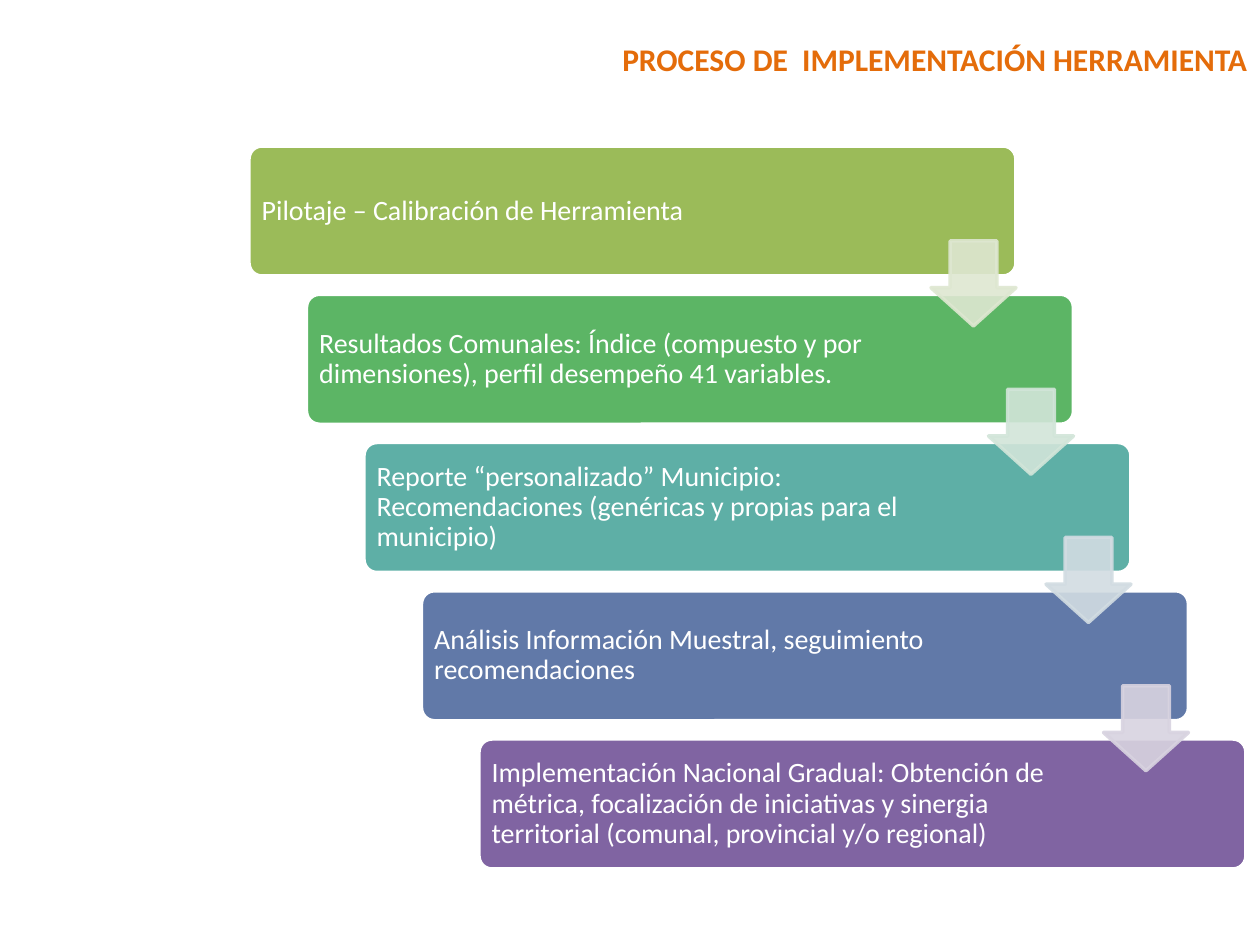
from lxml.etree import SubElement
from pptx import Presentation
from pptx.dml.color import RGBColor
from pptx.enum.shapes import MSO_SHAPE
from pptx.enum.text import MSO_ANCHOR, MSO_AUTO_SIZE, PP_ALIGN
from pptx.oxml.ns import qn
from pptx.util import Pt

PX = 914400 / 126
FONT = "Calibri"
WHITE = RGBColor(0xFF, 0xFF, 0xFF)
ORANGE = RGBColor(0xE4, 0x6C, 0x0A)

STEPS = [
    ("Pilotaje – Calibración de Herramienta", RGBColor(0x9B, 0xBB, 0x59)),
    ("Resultados Comunales: Índice (compuesto y por dimensiones), "
     "perfil desempeño 41 variables.", RGBColor(0x5C, 0xB5, 0x65)),
    ("Reporte “personalizado” Municipio:  Recomendaciones "
     "(genéricas y propias para el municipio)", RGBColor(0x5E, 0xAF, 0xA6)),
    ("Análisis Información Muestral, seguimiento recomendaciones",
     RGBColor(0x61, 0x79, 0xA8)),
    ("Implementación Nacional Gradual: Obtención de métrica, focalización de "
     "iniciativas y sinergia territorial (comunal, provincial y/o regional)",
     RGBColor(0x80, 0x64, 0xA2)),
]
ARROW_COLORS = [
    RGBColor(0xDE, 0xE7, 0xD1),
    RGBColor(0xD2, 0xE5, 0xD9),
    RGBColor(0xD2, 0xDC, 0xE2),
    RGBColor(0xD8, 0xD3, 0xE0),
]

STEP_WIDTH, STEP_HEIGHT = 767, 130
ARROW_SIZE, ARROW_DX, ARROW_DY = 85, 682, 95
PADDING, RIGHT_PADDING = 9, 151


def emu(px):
    return round(px * PX)


def format_text(paragraph, size, color, bold=False):
    for run in paragraph.runs:
        run.font.name = FONT
        run.font.size = Pt(size)
        run.font.bold = bold
        run.font.color.rgb = color


def add_block(slide, preset, left, top, width, height, fill, line, adjustments):
    block = slide.shapes.add_shape(preset, *map(emu, (left, top, width, height)))
    block.shadow.inherit = False
    block.fill.solid()
    block.fill.fore_color.rgb = fill
    block.line.color.rgb = line
    block.line.width = Pt(2)
    for index, value in enumerate(adjustments):
        block.adjustments[index] = value
    return block


def add_title(slide, left, top, width, height):
    title = slide.shapes.title
    title.left, title.top, title.width, title.height = map(
        emu, (left, top, width, height))
    frame = title.text_frame
    frame.text = "PROCESO DE  IMPLEMENTACIÓN HERRAMIENTA"
    frame.word_wrap = True
    frame.auto_size = MSO_AUTO_SIZE.NONE
    frame.vertical_anchor = MSO_ANCHOR.TOP
    heading = frame.paragraphs[0]
    heading.alignment = PP_ALIGN.RIGHT
    format_text(heading, 18, ORANGE, bold=True)


def add_step(slide, left, top, wording, color):
    step = add_block(slide, MSO_SHAPE.ROUNDED_RECTANGLE, left, top,
                     STEP_WIDTH, STEP_HEIGHT, color, WHITE, [0.1])
    frame = step.text_frame
    frame.text = wording
    frame.word_wrap = True
    frame.vertical_anchor = MSO_ANCHOR.MIDDLE
    frame.margin_left = frame.margin_top = frame.margin_bottom = emu(PADDING)
    frame.margin_right = emu(RIGHT_PADDING)
    paragraph = frame.paragraphs[0]
    paragraph.alignment = PP_ALIGN.LEFT
    paragraph.line_spacing = 0.9
    format_text(paragraph, 16, WHITE)


def add_arrow(slide, left, top, color):
    arrow = add_block(slide, MSO_SHAPE.DOWN_ARROW, left, top,
                      ARROW_SIZE, ARROW_SIZE, color, color, [0.55, 0.45])
    for shade in arrow._element.spPr.iter(qn("a:srgbClr")):
        SubElement(shade, qn("a:alpha"), val="90000")


def add_staircase(slide, left, top, width, height):
    gaps = len(STEPS) - 1
    dx = (width - STEP_WIDTH) / gaps
    dy = (height - STEP_HEIGHT) / gaps
    for index, (wording, color) in enumerate(STEPS):
        add_step(slide, left + index * dx, top + index * dy, wording, color)
    for index, color in enumerate(ARROW_COLORS):
        add_arrow(slide, left + index * dx + ARROW_DX,
                  top + index * dy + ARROW_DY, color)


def main():
    deck = Presentation()
    deck.slide_width, deck.slide_height = emu(1260), emu(945)
    slide = deck.slides.add_slide(deck.slide_layouts[5])
    add_title(slide, 199, 34, 1061, 50)
    add_staircase(slide, 249, 146, 997, 723)
    deck.save("out.pptx")


if __name__ == "__main__":
    main()
